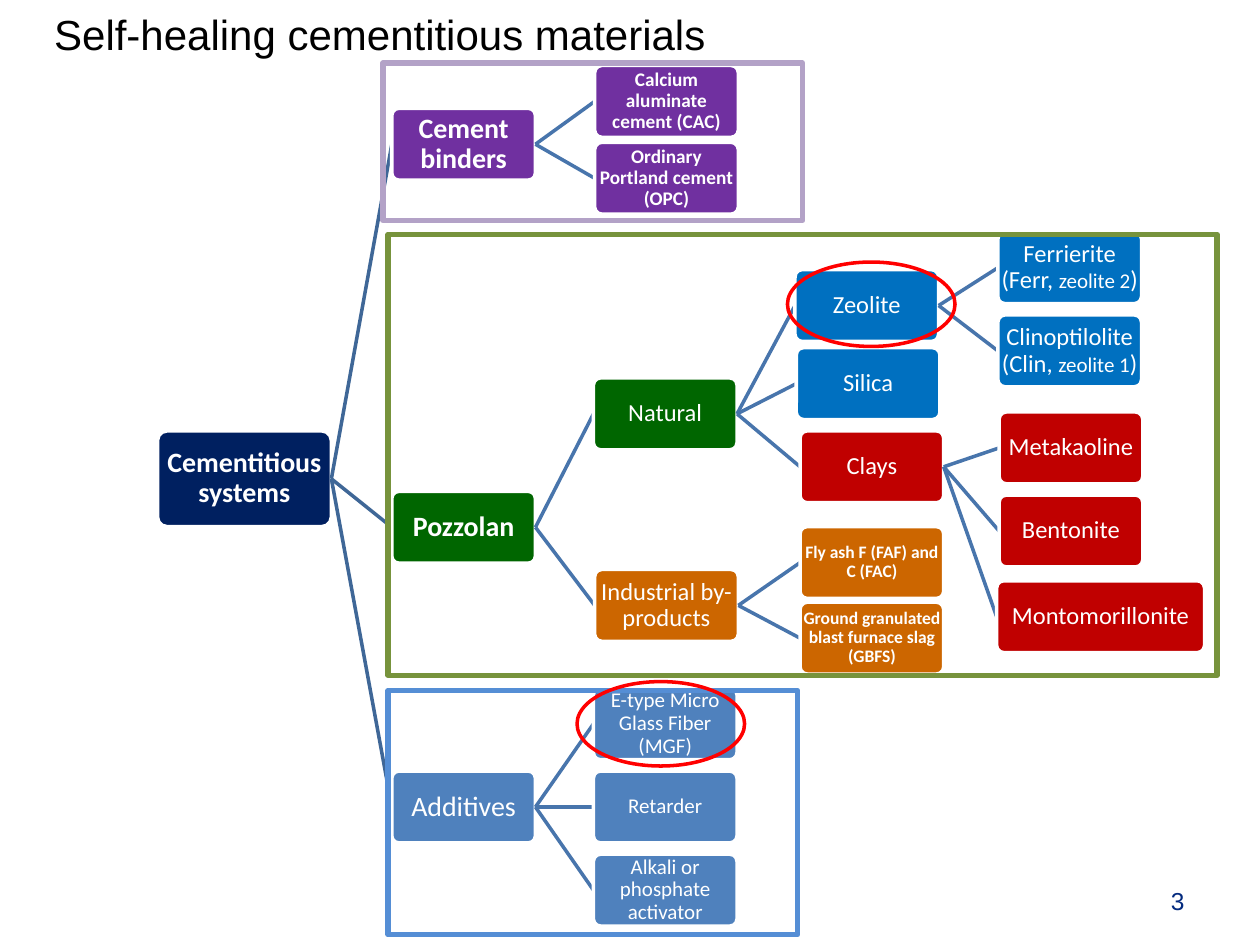
from pptx import Presentation
from pptx.dml.color import RGBColor as Rgb
from pptx.enum.shapes import MSO_CONNECTOR as Conn, MSO_SHAPE as Kind
from pptx.enum.text import MSO_ANCHOR as Anchor, PP_ALIGN as Align
from pptx.oxml.ns import qn
from pptx.util import Inches, Pt
from lxml import etree

NAVY, PLUM, GREEN, BLUE = "002060", "7030A0", "006600", "0070C0"
RED, RUST, STEEL, WHITE = "C00000", "CC6600", "4F81BD", "FFFFFF"
WIDE, HIGH = 1.14, 0.57


def tint(code):
    return Rgb.from_string(code)


class Sheet:
    """Holds the style and the slide being drawn."""

    def __init__(self, deck):
        self.slide = deck.slides.add_slide(deck.slide_layouts[5])
        self.shapes = self.slide.shapes

    def run(self, para, text, size, color, font="Calibri", bold=False):
        run = para.add_run()
        run.text = text
        run.font.name, run.font.size, run.font.bold = font, Pt(size), bold
        run.font.color.rgb = tint(color)

    def title(self, text):
        head = self.shapes.title
        head.left, head.top = Inches(0.33), Inches(0.02)
        head.width, head.height = Inches(9.58), Inches(0.5)
        head.text_frame.vertical_anchor = Anchor.TOP
        para = head.text_frame.paragraphs[0]
        para.alignment = Align.LEFT
        self.run(para, text, 24, "000000", "Arial")

    def number(self, text):
        area = self.shapes.add_textbox(Inches(7.17), Inches(6.95), Inches(2.33), Inches(0.4))
        frame = area.text_frame
        frame.word_wrap, frame.vertical_anchor = True, Anchor.MIDDLE
        para = frame.paragraphs[0]
        para.alignment = Align.RIGHT
        self.run(para, text, 14, "042B7F", "Arial")

    def shape(self, kind, x, y, w, h, line, width, fill=None):
        shape = self.shapes.add_shape(kind, Inches(x), Inches(y), Inches(w), Inches(h))
        shape.shadow.inherit = False
        shape.line.color.rgb, shape.line.width = tint(line), Pt(width)
        if fill:
            shape.fill.solid()
            shape.fill.fore_color.rgb = tint(fill)
        else:
            shape.fill.background()
        return shape

    def box(self, x, y, fill, size, text, bold=False, w=WIDE, h=HIGH):
        shape = self.shape(Kind.ROUNDED_RECTANGLE, x, y, w, h, WHITE, 2, fill)
        shape.adjustments[0] = 0.1
        frame = shape.text_frame
        frame.word_wrap, frame.vertical_anchor = True, Anchor.MIDDLE
        frame.margin_left = frame.margin_right = 0
        frame.margin_top = frame.margin_bottom = 0
        para = frame.paragraphs[0]
        para.alignment, para.line_spacing = Align.CENTER, 0.9
        runs = [(text, size)] if isinstance(text, str) else text
        for part, scale in runs:
            self.run(para, part, scale, WHITE, bold=bold)
        return shape

    def link(self, start, color):
        line = self.shapes.add_connector(Conn.STRAIGHT, 0, 0, 0, 0)
        line.begin_connect(start, 3)
        line.line.color.rgb, line.line.width = tint(color), Pt(2)
        etree.SubElement(line._element.spPr, qn("a:effectLst"))
        return line

    def tree(self, node, kids=(), start=None, color="3F6797"):
        line = self.link(start, color) if start is not None else None
        shape = self.box(**node)
        if line is not None:
            line.end_connect(shape, 1)
        shade = "3F6797" if start is None else "4875AC"
        for kid, *rest in kids:
            self.tree(kid, rest, shape, shade)


def item(x, y, fill, size, text, **more):
    return dict(x=x, y=y, fill=fill, size=size, text=text, **more)


BINDERS = [
    item(3.11, 0.86, PLUM, 16, "Cement binders", bold=True),
    [item(4.72, 0.52, PLUM, 11, "Calcium aluminate cement (CAC)", bold=True)],
    [item(4.72, 1.13, PLUM, 11, "Ordinary Portland cement (OPC)", bold=True)],
]
ZEOLITE = [
    item(6.31, 2.14, BLUE, 14, "Zeolite"),
    [item(7.92, 1.84, BLUE, 14, [("Ferrierite (Ferr, ", 14), ("zeolite 2", 12), (")", 14)])],
    [item(7.92, 2.5, BLUE, 14, [("Clinoptilolite (Clin, ", 14), ("zeolite 1", 12), (")", 14)])],
]
CLAYS = [
    item(6.35, 3.42, RED, 14, "Clays"),
    [item(7.93, 3.27, RED, 14, "Metakaoline")],
    [item(7.93, 3.93, RED, 14, "Bentonite")],
    [item(7.91, 4.61, RED, 14, "Montomorillonite", w=1.65)],
]
NATURAL = [
    item(4.71, 3, GREEN, 14, "Natural"),
    ZEOLITE,
    [item(6.32, 2.76, BLUE, 14, "Silica")],
    CLAYS,
]
WASTE = [
    item(4.72, 4.52, RUST, 14, "Industrial by-products"),
    [item(6.35, 4.18, RUST, 10, "Fly ash F (FAF) and C (FAC)", bold=True)],
    [item(6.35, 4.78, RUST, 10, "Ground granulated blast furnace slag (GBFS)", bold=True)],
]
POZZOLAN = [item(3.11, 3.9, GREEN, 16, "Pozzolan", bold=True), NATURAL, WASTE]
EXTRAS = ["E-type Micro Glass Fiber (MGF)", "Retarder", "Alkali or phosphate activator"]
ADDITIVES = [
    item(3.11, 6.12, STEEL, 16, "Additives"),
    *([item(4.71, 5.46 + 0.66 * i, STEEL, 12, name)] for i, name in enumerate(EXTRAS)),
]
ROOT = item(1.25, 3.42, NAVY, 16, "Cementitious systems", bold=True, w=1.38, h=0.76)
FRAMES = [
    (3.04, 0.5, 3.33, 1.25, "B3A2C7"),
    (3.08, 1.86, 6.58, 3.5, "77933C"),
    (3.08, 5.48, 3.25, 1.94, "558ED5"),
]
RINGS = [(6.25, 2.08), (4.58, 5.41)]


def main():
    deck = Presentation()
    deck.slide_width, deck.slide_height = Inches(10), Inches(7.5)
    sheet = Sheet(deck)
    sheet.title("Self-healing cementitious materials")
    sheet.tree(ROOT, [BINDERS, POZZOLAN, ADDITIVES])
    sheet.number("3")
    for *area, color in FRAMES:
        sheet.shape(Kind.RECTANGLE, *area, color, 3)
    for x, y in RINGS:
        sheet.shape(Kind.OVAL, x, y, 1.33, 0.67, "FF0000", 2)
    deck.save("out.pptx")


if __name__ == "__main__":
    main()
